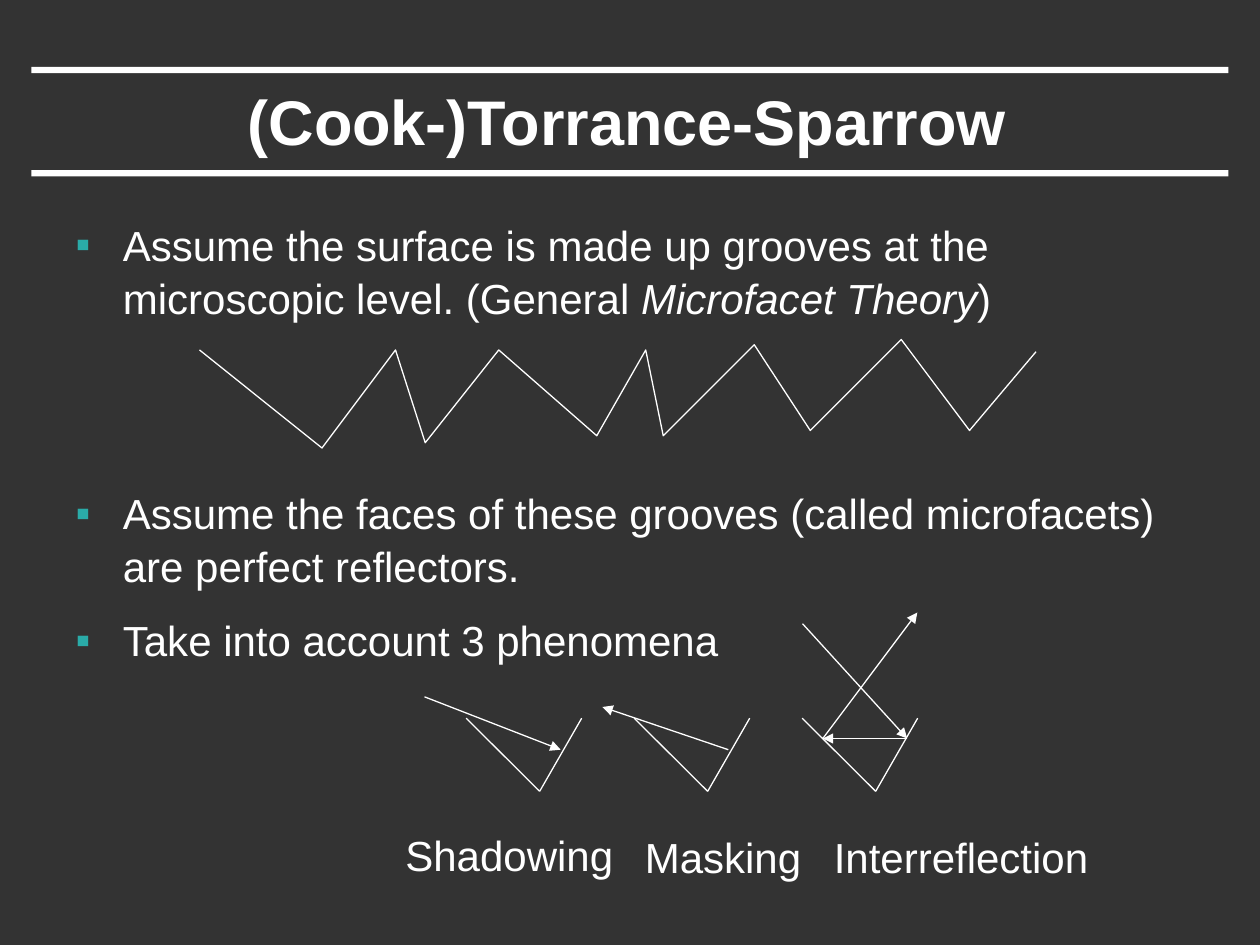
from dataclasses import dataclass

from lxml import etree
from pptx import Presentation
from pptx.dml.color import RGBColor
from pptx.enum.shapes import MSO_CONNECTOR, MSO_SHAPE
from pptx.enum.text import MSO_ANCHOR, MSO_AUTO_SIZE, PP_ALIGN
from pptx.oxml.ns import qn
from pptx.slide import Slide
from pptx.util import Pt

STRAIGHT = MSO_CONNECTOR.STRAIGHT
RECTANGLE = MSO_SHAPE.RECTANGLE
MIDDLE, TOP = MSO_ANCHOR.MIDDLE, MSO_ANCHOR.TOP
NO_AUTOFIT = MSO_AUTO_SIZE.NONE
CENTER, LEFT = PP_ALIGN.CENTER, PP_ALIGN.LEFT

CHARCOAL = RGBColor(0x33, 0x33, 0x33)
WHITE = RGBColor(0xFF, 0xFF, 0xFF)
TEAL = RGBColor(0x2A, 0xAB, 0xA8)
FONT = "Arial"
LINE_WIDTH = Pt(0.75)
HANGING = 27


@dataclass(frozen=True)
class Bullet:
    spans: tuple[str, ...]
    space_before: float
    italic_span: int = -1


@dataclass(frozen=True)
class Segment:
    start: tuple[float, float]
    end: tuple[float, float]
    arrow: bool = False


@dataclass(frozen=True)
class Label:
    text: str
    left: float
    top: float
    width: float


RULE_TOPS = (38.2, 97.2)
BULLETS = (
    Bullet(("Assume the surface is made up grooves at the microscopic level. (General ",
            "Microfacet Theory", ")"), 0, italic_span=1),
    Bullet(("Assume the faces of these grooves (called microfacets) are perfect reflectors.",), 93),
    Bullet(("Take into account 3 phenomena",), 12),
)
GROOVES = (
    (114.5, 200.2), (184.3, 256.3), (226.1, 200.2), (243.4, 252.7), (285.1, 200.2),
    (340.6, 249.1), (368.6, 200.2), (379.4, 249.1), (431.3, 197.3), (463, 245.5),
    (514.8, 193.7), (553.7, 245.5), (591.8, 200.9),
)
VALLEY_LEFT, VALLEY_STEP, VALLEY_TOP, VALLEY_BOTTOM = 266.4, 96, 410.4, 452.2
RIGHT_HIT, LEFT_HIT = (518.4, 422), (470.2, 422)
RAYS = (
    Segment((242.6, 398.2), (320.4, 428.4), True),
    Segment((416.2, 428.4), (344.2, 404), True),
    Segment((458.6, 356.4), RIGHT_HIT, True),
    Segment(RIGHT_HIT, LEFT_HIT, True),
    Segment(LEFT_HIT, (524.2, 350), True),
)
LABELS = (
    Label("Shadowing", 224.6, 470.2, 134.6),
    Label("Masking", 361.4, 471.6, 105.1),
    Label("Interreflection", 469.4, 471.6, 161.3),
)


def place(shape, left: float, top: float, width: float, height: float) -> None:
    shape.left, shape.top = Pt(left), Pt(top)
    shape.width, shape.height = Pt(width), Pt(height)


def style(span, size: float, bold: bool = False, italic: bool = False) -> None:
    span.font.name = FONT
    span.font.size = Pt(size)
    span.font.bold = bold
    span.font.italic = italic
    span.font.color.rgb = WHITE


def add_rule(page: Slide, top: float) -> None:
    rule = page.shapes.add_shape(RECTANGLE, Pt(18), Pt(top), Pt(684), Pt(3.6))
    rule.shadow.inherit = False
    rule.fill.solid()
    rule.fill.fore_color.rgb = WHITE
    rule.line.fill.background()


def fill_title(page: Slide) -> None:
    title = page.shapes.title
    place(title, 53.3, 41.8, 609.8, 54)
    frame = title.text_frame
    frame.text = "(Cook-)Torrance-Sparrow"
    frame.auto_size = NO_AUTOFIT
    frame.vertical_anchor = MIDDLE
    paragraph = frame.paragraphs[0]
    paragraph.alignment = CENTER
    style(paragraph.runs[0], 36, bold=True)


def set_bullet(paragraph) -> None:
    properties = paragraph._p.get_or_add_pPr()
    properties.set("marL", str(Pt(HANGING)))
    properties.set("indent", str(-Pt(HANGING)))
    colour = etree.SubElement(properties, qn("a:buClr"))
    etree.SubElement(colour, qn("a:srgbClr")).set("val", str(TEAL))
    etree.SubElement(properties, qn("a:buFont")).set("typeface", FONT)
    etree.SubElement(properties, qn("a:buChar")).set("char", "▪")


def fill_body(page: Slide) -> None:
    body = page.placeholders[1]
    place(body, 36, 120.2, 648, 396)
    frame = body.text_frame
    frame.auto_size = NO_AUTOFIT
    frame.vertical_anchor = TOP
    for index, bullet in enumerate(BULLETS):
        paragraph = frame.add_paragraph() if index else frame.paragraphs[0]
        paragraph.alignment = LEFT
        paragraph.line_spacing = 1.05
        paragraph.space_before = Pt(bullet.space_before)
        set_bullet(paragraph)
        for position, text in enumerate(bullet.spans):
            span = paragraph.add_run()
            span.text = text
            style(span, 24, italic=position == bullet.italic_span)


def add_grooves(page: Slide) -> None:
    builder = page.shapes.build_freeform(*GROOVES[0], scale=Pt(1))
    builder.add_line_segments(GROOVES[1:], close=False)
    grooves = builder.convert_to_shape()
    grooves.shadow.inherit = False
    grooves.fill.background()
    grooves.line.color.rgb = WHITE
    grooves.line.width = LINE_WIDTH


def add_segment(page: Slide, segment: Segment) -> None:
    ends = [Pt(value) for value in segment.start + segment.end]
    connector = page.shapes.add_connector(STRAIGHT, *ends)
    connector.line.color.rgb = WHITE
    connector.line.width = LINE_WIDTH
    if segment.arrow:
        outline = connector.line._get_or_add_ln()
        etree.SubElement(outline, qn("a:tailEnd")).set("type", "triangle")
    etree.SubElement(connector._element.spPr, qn("a:effectLst"))


def add_valley(page: Slide, left: float) -> None:
    bottom = (left + 42, VALLEY_BOTTOM)
    add_segment(page, Segment((left, VALLEY_TOP), bottom))
    add_segment(page, Segment(bottom, (left + 66, VALLEY_TOP)))


def add_label(page: Slide, label: Label) -> None:
    box = page.shapes.add_textbox(Pt(label.left), Pt(label.top), Pt(label.width), Pt(36))
    box.text_frame.text = label.text
    box.text_frame.word_wrap = False
    style(box.text_frame.paragraphs[0].runs[0], 24)


def main() -> None:
    deck = Presentation()
    deck.slide_width, deck.slide_height = Pt(720), Pt(540)
    page = deck.slides.add_slide(deck.slide_layouts[1])
    page.background.fill.solid()
    page.background.fill.fore_color.rgb = CHARCOAL
    for top in RULE_TOPS:
        add_rule(page, top)
    fill_title(page)
    fill_body(page)
    add_grooves(page)
    for index in range(3):
        add_valley(page, VALLEY_LEFT + index * VALLEY_STEP)
    for ray in RAYS:
        add_segment(page, ray)
    for label in LABELS:
        add_label(page, label)
    deck.save("out.pptx")


if __name__ == "__main__":
    main()
